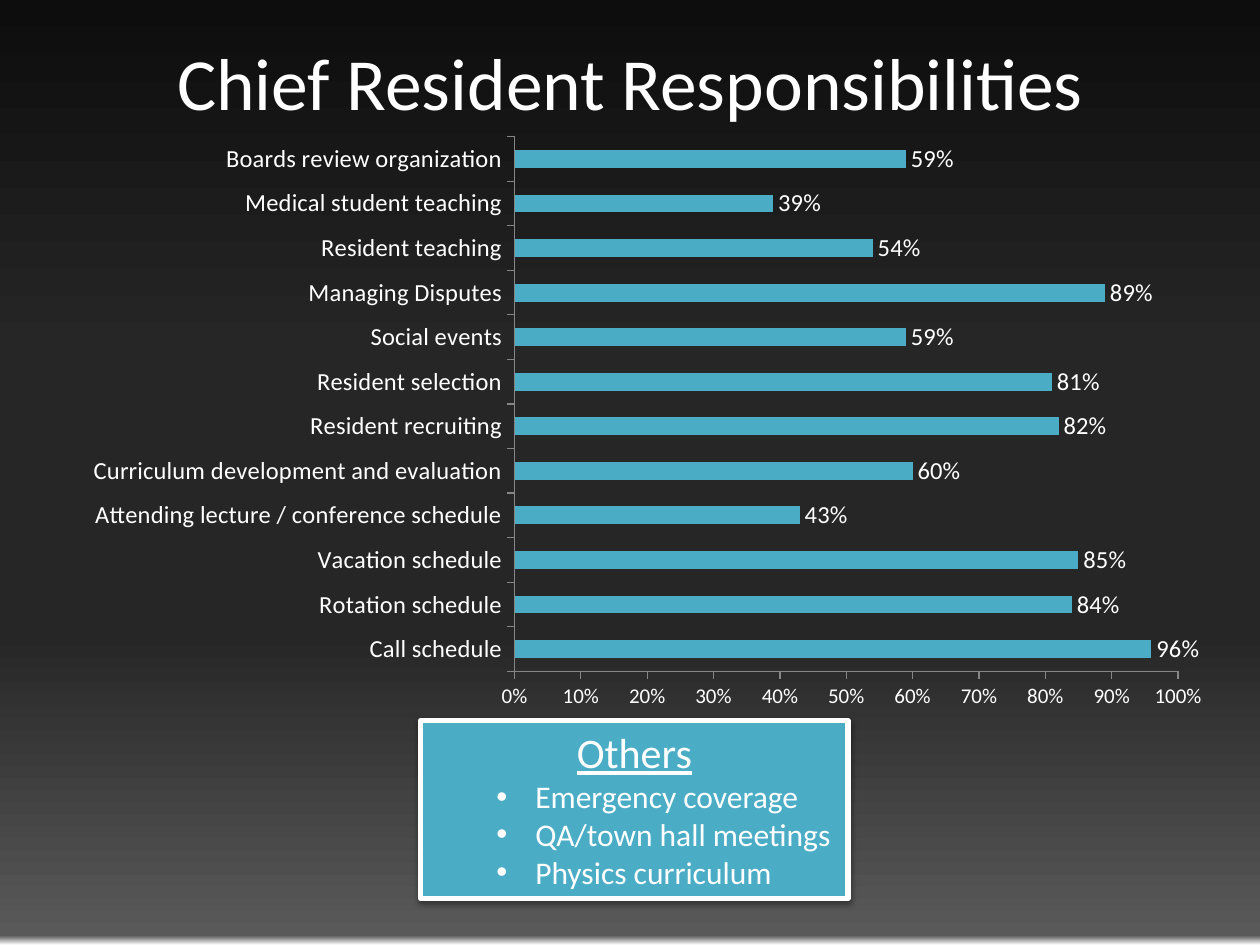
from lxml import etree
from pptx import Presentation
from pptx import util as u
from pptx.chart.data import CategoryChartData
from pptx.dml.color import RGBColor
from pptx.enum import chart as ch, shapes, text
from pptx.oxml import parse_xml
from pptx.oxml.ns import nsdecls, qn

THEME = {
    "font": "Calibri",
    "white": RGBColor.from_string("FFFFFF"),
    "teal": RGBColor.from_string("4BACC6"),
    "axis": RGBColor.from_string("868686"),
    "backdrop": [(0, "0D0D0D"), (37, "262626"), (67, "262626"), (99, "595959"), (100, "FFFFFF")],
    "title": u.Pt(42),
    "heading": u.Pt(24),
    "item": u.Pt(18),
    "category": u.Pt(14),
    "scale": u.Pt(12),
}

RESPONSIBILITIES = {
    "Call schedule": 0.96,
    "Rotation schedule": 0.84,
    "Vacation schedule": 0.85,
    "Attending lecture / conference schedule": 0.43,
    "Curriculum development and evaluation": 0.60,
    "Resident recruiting": 0.82,
    "Resident selection": 0.81,
    "Social events": 0.59,
    "Managing Disputes": 0.89,
    "Resident teaching": 0.54,
    "Medical student teaching": 0.39,
    "Boards review organization": 0.59,
}
OTHERS = ["Emergency coverage", "QA/town hall meetings", "Physics curriculum"]


def apply(target, values):
    for name, value in values.items():
        setattr(target, name, value)


def style_font(font, size):
    apply(font, {"name": THEME["font"], "size": size, "bold": False})
    font.color.rgb = THEME["white"]


prs = Presentation()
apply(prs, {"slide_width": u.Inches(10), "slide_height": u.Inches(7.5)})
slide = prs.slides.add_slide(prs.slide_layouts[5])

backdrop = slide.background.fill
backdrop.gradient()
backdrop.gradient_angle = 270
stops = backdrop._fill._gradFill.find(qn("a:gsLst"))
for stop in list(stops):
    stops.remove(stop)
for position, color in THEME["backdrop"]:
    stop = etree.SubElement(stops, qn("a:gs"), pos=str(position * 1000))
    etree.SubElement(stop, qn("a:srgbClr"), val=color)

title = slide.shapes.title
apply(title, {"left": u.Inches(0.5), "top": u.Inches(0.02),
              "width": u.Inches(9), "height": u.Inches(1.25)})
title.text_frame.text = "Chief Resident Responsibilities"
title.text_frame.vertical_anchor = text.MSO_ANCHOR.MIDDLE
title.text_frame.paragraphs[0].alignment = text.PP_ALIGN.CENTER
style_font(title.text_frame.paragraphs[0].runs[0].font, THEME["title"])

others = slide.shapes.add_shape(shapes.MSO_SHAPE.RECTANGLE, u.Inches(3.34), u.Inches(5.72),
                                u.Inches(3.39), u.Inches(1.41))
others.fill.solid()
others.fill.fore_color.rgb = THEME["teal"]
others.line.color.rgb = THEME["white"]
others.line.width = u.Pt(3)
others.shadow.inherit = False
effects = others._element.spPr.find(qn("a:effectLst"))
effects.append(parse_xml(
    f'<a:outerShdw {nsdecls("a")} blurRad="{u.Pt(3.1)}" dist="{u.Pt(1.6)}" dir="5400000" '
    'rotWithShape="0"><a:srgbClr val="000000"><a:alpha val="38000"/></a:srgbClr></a:outerShdw>'))

others_text = others.text_frame
apply(others_text, {"word_wrap": False, "auto_size": text.MSO_AUTO_SIZE.SHAPE_TO_FIT_TEXT,
                    "vertical_anchor": text.MSO_ANCHOR.TOP})
heading = others_text.paragraphs[0]
heading.text = "Others"
heading.alignment = text.PP_ALIGN.CENTER
style_font(heading.runs[0].font, THEME["heading"])
heading.runs[0].font.underline = True
for duty in OTHERS:
    item = others_text.add_paragraph()
    apply(item, {"text": duty, "level": 1, "alignment": text.PP_ALIGN.LEFT})
    style_font(item.runs[0].font, THEME["item"])
    bullet = item._p.get_or_add_pPr()
    bullet.set("marL", str(u.Inches(0.81)))
    bullet.set("indent", str(u.Inches(-0.31)))
    etree.SubElement(bullet, qn("a:buFont"), typeface="Arial")
    etree.SubElement(bullet, qn("a:buChar"), char="•")

survey = CategoryChartData(number_format="0%")
survey.categories = list(RESPONSIBILITIES)
survey.add_series("Series 1", list(RESPONSIBILITIES.values()))
chart = slide.shapes.add_chart(ch.XL_CHART_TYPE.BAR_CLUSTERED, u.Inches(0.56), u.Inches(0.99),
                               u.Inches(9.16), u.Inches(4.73), survey).chart
apply(chart, {"has_legend": False, "has_title": False})
style_font(chart.font, THEME["scale"])

for axis, size in ((chart.category_axis, THEME["category"]), (chart.value_axis, THEME["scale"])):
    apply(axis, {"has_major_gridlines": False, "major_tick_mark": ch.XL_TICK_MARK.OUTSIDE,
                 "minor_tick_mark": ch.XL_TICK_MARK.NONE})
    style_font(axis.tick_labels.font, size)
    axis.format.line.color.rgb = THEME["axis"]
    axis.format.line.width = u.Pt(0.75)
apply(chart.value_axis, {"minimum_scale": 0, "maximum_scale": 1, "major_unit": 0.1})
apply(chart.value_axis.tick_labels, {"number_format": "0%", "number_format_is_linked": False})

bars = chart.plots[0]
apply(bars, {"gap_width": 150, "vary_by_categories": False, "has_data_labels": True})
bars.series[0].format.fill.solid()
bars.series[0].format.fill.fore_color.rgb = THEME["teal"]
apply(bars.data_labels, {"show_value": True, "number_format": "0%",
                         "number_format_is_linked": False,
                         "position": ch.XL_LABEL_POSITION.OUTSIDE_END})
style_font(bars.data_labels.font, THEME["category"])

prs.save("out.pptx")
